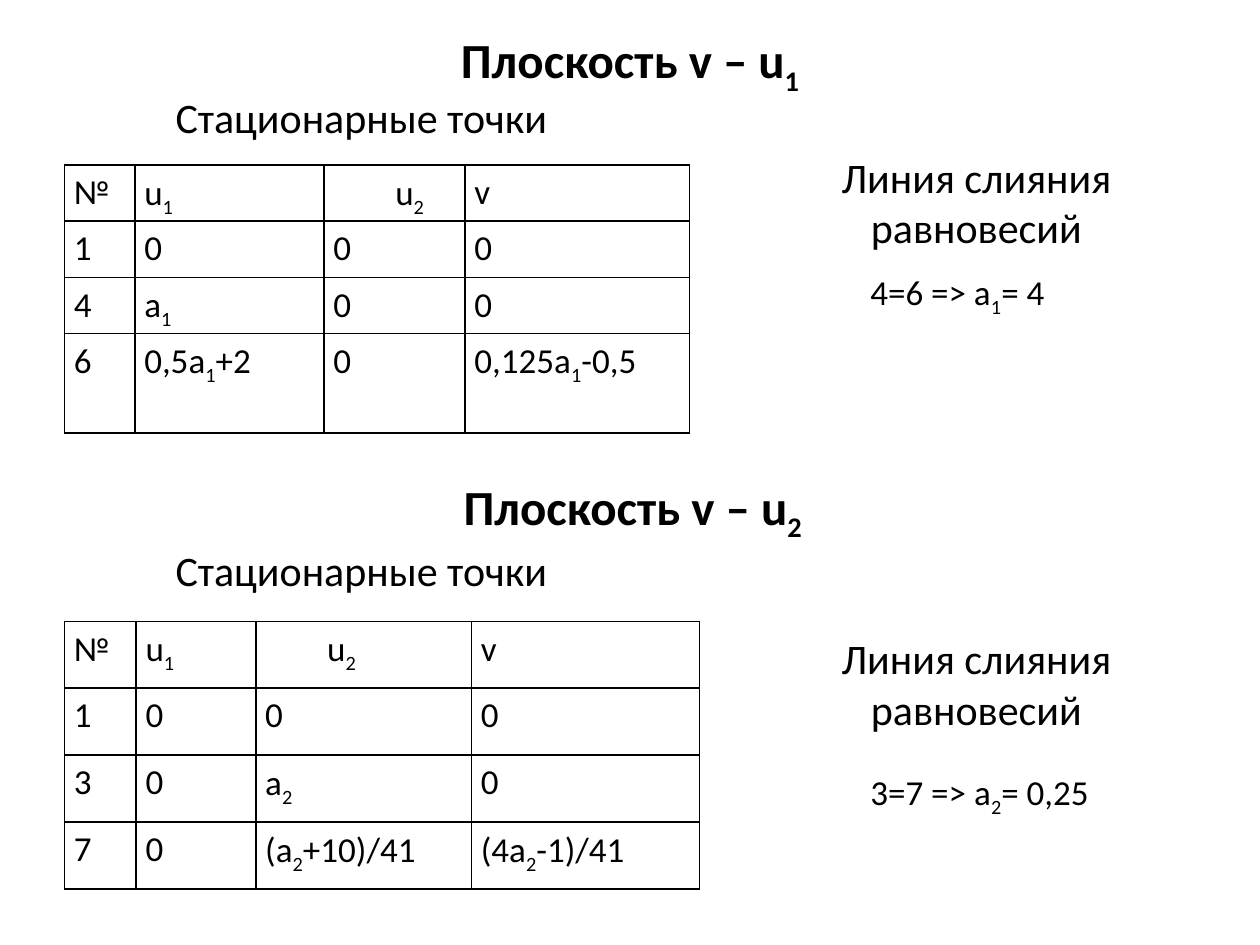
from lxml import etree
from pptx import Presentation
from pptx.dml.color import RGBColor
from pptx.enum.text import MSO_AUTO_SIZE, PP_ALIGN
from pptx.oxml.ns import qn
from pptx.util import Pt

CENTER, LEFT, JUSTIFY = PP_ALIGN.CENTER, PP_ALIGN.LEFT, PP_ALIGN.JUSTIFY
GROW = MSO_AUTO_SIZE.SHAPE_TO_FIT_TEXT
FONT = "Calibri"
COLORS = {"text": "000000", "border": "000000"}

# Content: text between bars is a subscript
POINTS_HEADING = "Стационарные точки"
MERGE_HEADING = "Линия слияния равновесий"
HEADER = ["№", "u|1|", "u|2|", "v"]
PLANES = [
    {
        "title": "Плоскость v – u|1|",
        "rows": [
            HEADER,
            ["1", "0", "0", "0"],
            ["4", "a|1|", "0", "0"],
            ["6", "0,5а|1|+2", "0", "0,125а|1|-0,5"],
        ],
        "merge": "4=6 => a|1|= 4",
        "tops": {"title": 13.5, "points": 49, "table": 94.3, "merge_heading": 83, "merge": 151.2},
        "title_width": 720,
        "merge_width": 164,
        "column_widths": [40.3, 108, 80.7, 128.2],
        "row_heights": [32.1, 32.1, 32.1, 57],
        "indented_align": LEFT,
    },
    {
        "title": "Плоскость v – u|2|",
        "rows": [
            HEADER,
            ["1", "0", "0", "0"],
            ["3", "0", "a|2|", "0"],
            ["7", "0", "(a|2|+10)/41", "(4a|2|-1)/41"],
        ],
        "merge": "3=7 => a|2|= 0,25",
        "tops": {"title": 268.8, "points": 307.5, "table": 355, "merge_heading": 358, "merge": 437},
        "title_width": 723,
        "merge_width": 170,
        "column_widths": [41, 68.4, 123.2, 130.2],
        "row_heights": [38.25] * 4,
        "indented_align": JUSTIFY,
    },
]
TABLE_LEFT, POINTS_LEFT, MERGE_HEADING_LEFT, MERGE_LEFT = 36.8, 82, 433.5, 490.3
HEADING_WIDTH = 249
CELL_MARGIN, HEADER_INDENT = 5.4, 35.4


def write(paragraph, text, size, align, bold=False):
    paragraph.alignment = align
    for index, part in enumerate(text.split("|")):
        if not part:
            continue
        run = paragraph.add_run()
        run.text = part
        run.font.name = FONT
        run.font.size = Pt(size)
        run.font.bold = bold
        run.font.color.rgb = RGBColor.from_string(COLORS["text"])
        if index % 2:
            run.font._element.set("baseline", "-25000")


def add_text(slide, text, left, top, width, height, size, align=CENTER, bold=False):
    box = slide.shapes.add_textbox(Pt(left), Pt(top), Pt(width), Pt(height))
    box.text_frame.word_wrap = True
    box.text_frame.auto_size = GROW
    write(box.text_frame.paragraphs[0], text, size, align, bold)


def add_borders(cell):
    properties = cell._tc.get_or_add_tcPr()
    for position, side in enumerate(("a:lnL", "a:lnR", "a:lnT", "a:lnB")):
        line = etree.Element(qn(side), w=str(Pt(1)))
        fill = etree.SubElement(line, qn("a:solidFill"))
        etree.SubElement(fill, qn("a:srgbClr"), val=COLORS["border"])
        properties.insert(position, line)


def add_points_table(slide, plane):
    rows, widths, heights = plane["rows"], plane["column_widths"], plane["row_heights"]
    table = slide.shapes.add_table(
        len(rows), len(widths), Pt(TABLE_LEFT), Pt(plane["tops"]["table"]),
        Pt(sum(widths)), Pt(sum(heights))).table
    table.first_row = table.horz_banding = False
    for column, width in zip(table.columns, widths):
        column.width = Pt(width)
    for row, height, values in zip(table.rows, heights, rows):
        row.height = Pt(height)
        for cell, value in zip(row.cells, values):
            cell.margin_left = cell.margin_right = Pt(CELL_MARGIN)
            cell.margin_top = cell.margin_bottom = 0
            cell.fill.background()
            add_borders(cell)
            paragraph = cell.text_frame.paragraphs[0]
            paragraph.line_spacing = 1.15
            write(paragraph, value, 20, JUSTIFY)

    # The u2 heading has a first-line indent
    paragraph = table.cell(0, 2).text_frame.paragraphs[0]
    paragraph.alignment = plane["indented_align"]
    paragraph._p.get_or_add_pPr().set("indent", str(Pt(HEADER_INDENT)))


presentation = Presentation()
presentation.slide_width, presentation.slide_height = Pt(720), Pt(540)
slide = presentation.slides.add_slide(presentation.slide_layouts[6])

for plane in PLANES:
    tops = plane["tops"]
    # Title, stationary points and merging line of each plane
    add_text(slide, plane["title"], 0, tops["title"], plane["title_width"], 41.2, 28, bold=True)
    add_text(slide, POINTS_HEADING, POINTS_LEFT, tops["points"], HEADING_WIDTH, 36.35, 24)
    add_points_table(slide, plane)
    add_text(slide, MERGE_HEADING, MERGE_HEADING_LEFT, tops["merge_heading"],
             HEADING_WIDTH, 65.4, 24)
    add_text(slide, plane["merge"], MERGE_LEFT, tops["merge"], plane["merge_width"],
             31.5, 20, LEFT)

presentation.save("out.pptx")
